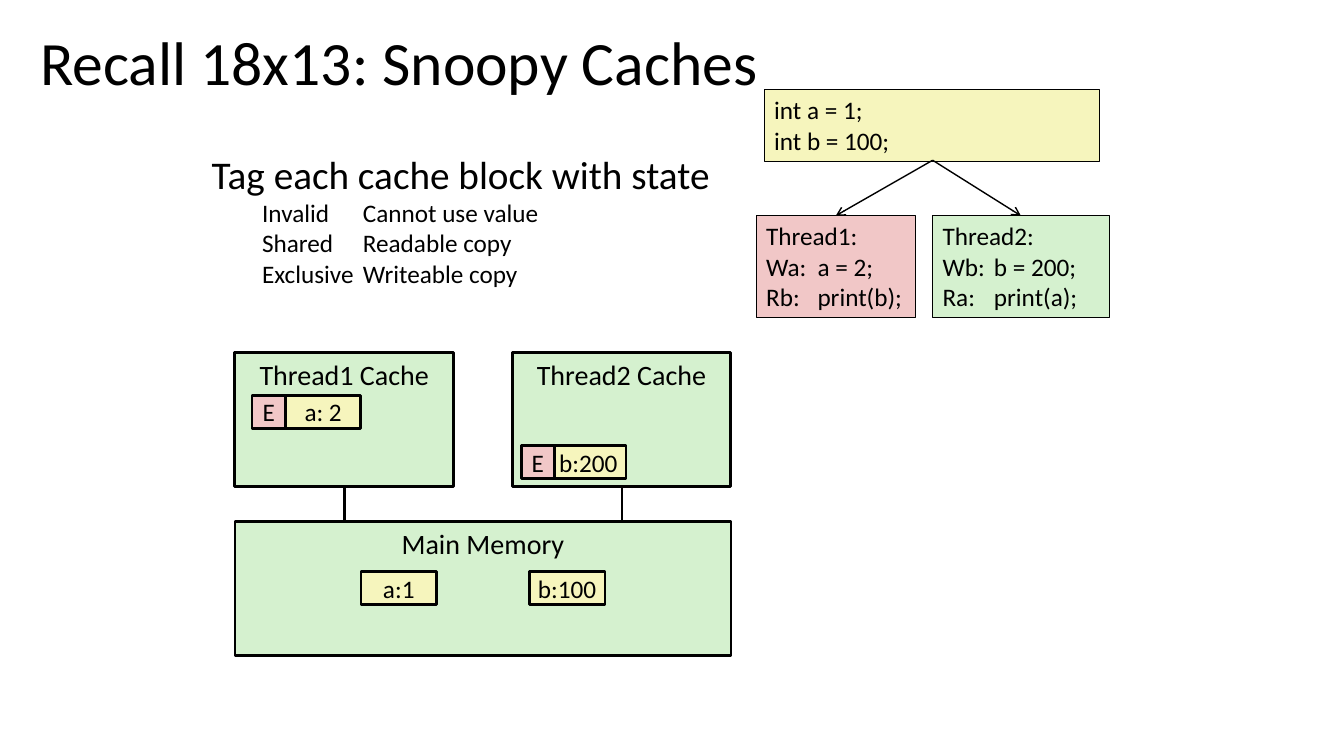
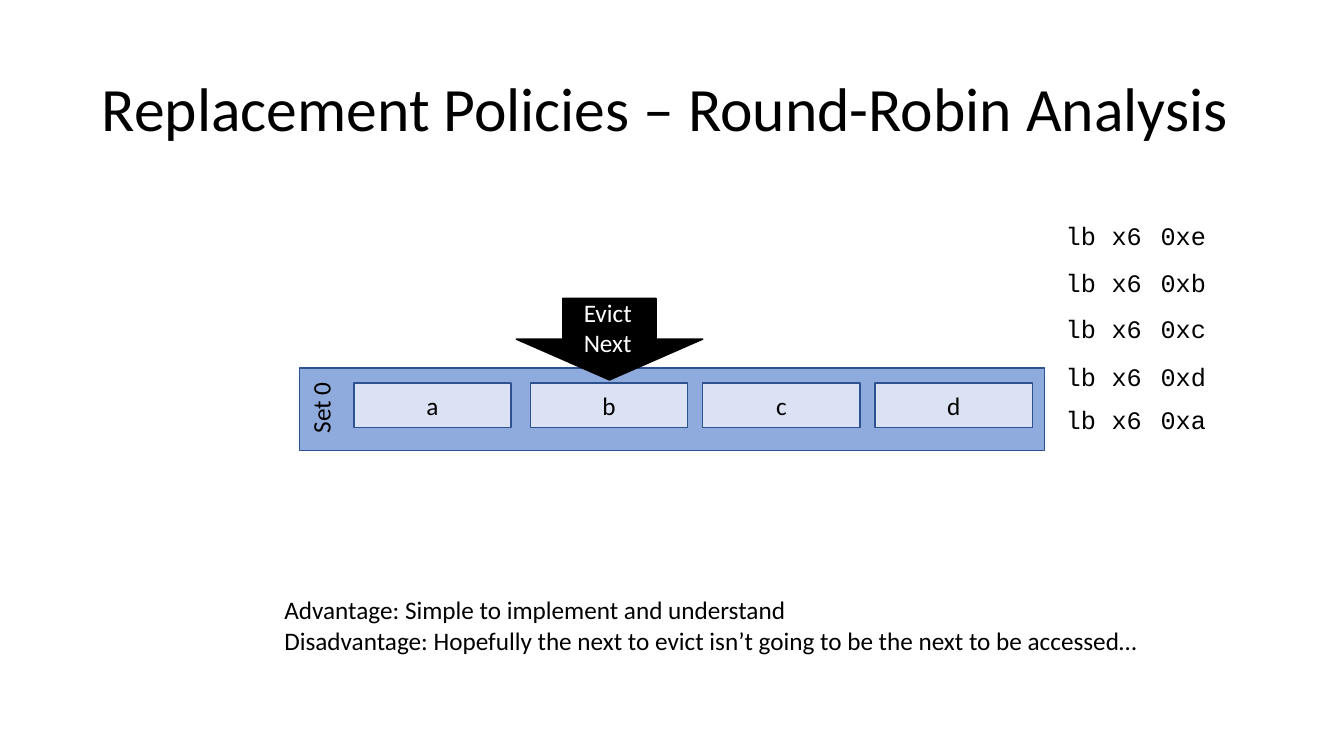
import pptx
import pptx.dml.color
import pptx.enum.shapes
import pptx.enum.text
import pptx.oxml
import pptx.oxml.ns
import pptx.util
from lxml import etree

Inches = pptx.util.Inches
Pt = pptx.util.Pt
SHAPE = pptx.enum.shapes.MSO_SHAPE
ALIGN = pptx.enum.text.PP_ALIGN
ANCHOR = pptx.enum.text.MSO_ANCHOR
qn = pptx.oxml.ns.qn

# Shared colours
BLACK, WHITE = "000000", "FFFFFF"
GREEN, YELLOW, PINK = "D5F1CF", "F6F5BD", "F1C7C7"
BLUE, PALE_BLUE, NAVY = "8FAADC", "DAE2F3", "2E528F"


def rgb(value):
    return pptx.dml.color.RGBColor.from_string(value)


class Deck:
    """Holds the style and the current slide."""
    font, code_font = "Calibri", "Courier New"
    title_size, text_size = 44, 18

    def __init__(self):
        self.prs = pptx.Presentation()
        self.prs.slide_width, self.prs.slide_height = Inches(13.33), Inches(7.5)
        self.s = None

    def slide(self):
        self.s = self.prs.slides.add_slide(self.prs.slide_layouts[6])

    def style(self, tf, text, size=text_size, color=BLACK, font=font,
              align=ALIGN.LEFT, tab=None):
        tf.text = text
        for p in tf.paragraphs:
            p.alignment = align
            if tab:
                tabs = etree.SubElement(p._p.get_or_add_pPr(), qn("a:tabLst"))
                etree.SubElement(tabs, qn("a:tab"), pos=str(Inches(tab)), algn="l")
            for r in p.runs:
                r.font.size, r.font.name = Pt(size), font
                r.font.color.rgb = rgb(color)

    def text(self, x, y, w, h, text, vert=None, **style):
        tf = self.s.shapes.add_textbox(*map(Inches, (x, y, w, h))).text_frame
        tf.word_wrap = True
        tf.margin_left = tf.margin_right = tf.margin_top = tf.margin_bottom = 0
        if vert:
            tf._txBody.bodyPr.set("vert", vert)
        self.style(tf, text, **style)

    def title(self, x, y, text):
        self.text(x, y, 12.93 - x, 0.74, text, size=self.title_size)

    def box(self, x, y, w, h, fill, text="", line=BLACK, weight=2.0,
            anchor=ANCHOR.TOP, wrap=True, kind=SHAPE.RECTANGLE, **style):
        sp = self.s.shapes.add_shape(kind, *map(Inches, (x, y, w, h)))
        sp.shadow.inherit = False
        sp.fill.solid()
        sp.fill.fore_color.rgb = rgb(fill)
        sp.line.color.rgb, sp.line.width = rgb(line), Pt(weight)
        if text:
            tf = sp.text_frame
            tf.word_wrap, tf.vertical_anchor = wrap, anchor
            self.style(tf, text, **style)

    def label(self, x, y, w, h, fill, text, **style):
        """A small box with its text in the middle."""
        self.box(x, y, w, h, fill, text, anchor=ANCHOR.MIDDLE, wrap=False,
                 align=ALIGN.CENTER, **style)

    def line(self, x1, y1, x2, y2, weight, arrow=False):
        c = self.s.shapes.add_connector(pptx.enum.shapes.MSO_CONNECTOR.STRAIGHT,
                                        *map(Inches, (x1, y1, x2, y2)))
        c.line.color.rgb, c.line.width = rgb(BLACK), Pt(weight)
        if arrow:
            etree.SubElement(c.line._get_or_add_ln(), qn("a:tailEnd"), type="arrow")
        etree.SubElement(c._element.spPr, qn("a:effectLst"))

    def code_table(self, x, y, widths, heights, tops, rows):
        aligns = (ALIGN.LEFT, ALIGN.CENTER, ALIGN.RIGHT)
        table = self.s.shapes.add_table(
            len(rows), len(widths), Inches(x), Inches(y),
            Inches(sum(widths)), Inches(sum(heights))).table
        table.first_row = table.horz_banding = False
        for column, width in zip(table.columns, widths):
            column.width = Inches(width)
        for i, row in enumerate(rows):
            table.rows[i].height = Inches(heights[i])
            for j, text in enumerate(row.split()):
                cell = table.cell(i, j)
                cell.fill.background()
                cell.margin_left = Inches(0.03 if j == 0 else 0)
                cell.margin_right = cell.margin_bottom = 0
                cell.margin_top = Inches(tops[i])
                self.style(cell.text_frame, text, font=self.code_font,
                           align=aligns[j])
                # Plain cells, no borders
                for k, side in enumerate(("a:lnL", "a:lnR", "a:lnT", "a:lnB")):
                    ln = pptx.oxml.parse_xml(
                        f'<{side} {pptx.oxml.ns.nsdecls("a")}><a:noFill/></{side}>')
                    cell._tc.get_or_add_tcPr().insert(k, ln)


def snoopy_caches(d):
    d.slide()
    d.title(0.4, 0.24, "Recall 18x13: Snoopy Caches")

    # Block states
    d.text(2.1, 1.49, 8.64, 0.47, "Tag each cache block with state", size=28)
    d.text(2.6, 1.96, 8.14, 0.92, "Invalid\tCannot use value\n"
           "Shared\tReadable copy\nExclusive\tWriteable copy", tab=1)

    # Main memory
    d.box(2.33, 5.17, 4.92, 1.33, GREEN, "Main Memory", size=20, align=ALIGN.CENTER)
    for x, text in ((3.58, "a:1"), (5.25, "b:100")):
        d.label(x, 5.67, 0.75, 0.33, YELLOW, text)

    # Caches, each with one exclusive block
    caches = ((2.33, "Thread1 Cache", 2.5, 2.83, 3.92, "a: 2"),
              (5.08, "Thread2 Cache", 5.17, 5.46, 4.42, "b:200"))
    for x, name, tag_x, value_x, y, value in caches:
        d.box(x, 3.5, 2.17, 1.33, GREEN, name, size=20, align=ALIGN.CENTER)
        d.line(x + 1.09, 5.17, x + 1.09, 4.83, 2)
        d.label(value_x, y, 0.75, 0.33, YELLOW, value)
        d.label(tag_x, y, 0.33, 0.33, PINK, "E")

    # Program and its threads
    d.box(7.58, 0.89, 3.33, 0.71, YELLOW, "int a = 1;\nint b = 100;", weight=0.75)
    threads = ((7.5, 1.58, PINK, "Thread1:\nWa:\ta = 2;\nRb:\tprint(b);"),
               (9.25, 1.75, GREEN, "Thread2:\nWb:\tb = 200;\nRa:\tprint(a);"))
    for x, w, fill, code in threads:
        d.box(x, 2.14, w, 1.01, fill, code, weight=0.75, tab=0.51)
        d.line(9.25, 1.59, x + w / 2, 2.14, 1, arrow=True)


def round_robin(d):
    d.slide()
    d.title(1.01, 0.69, "Replacement Policies – Round-Robin Analysis")

    # Load instructions
    d.code_table(10.54, 2.23, (0.41, 0.45, 0.56), (0.41, 0.46, 0.47, 0.45, 0.39),
                 (0, 0.05, 0.05, 0.06, 0.03),
                 [f"lb x6 0x{block}" for block in "ebcda"])

    # Cache set and its blocks
    d.box(2.97, 3.65, 7.39, 0.82, BLUE, line=NAVY, weight=1)
    d.text(3.03, 3.77, 0.28, 0.53, "Set 0", vert="vert270")
    for x, block in zip((3.51, 5.26, 6.97, 8.68), "abcd"):
        d.label(x, 3.8, 1.56, 0.44, PALE_BLUE, block, line=NAVY, weight=1)

    # Eviction pointer
    d.box(5.12, 2.96, 1.85, 0.81, BLACK, weight=1, kind=SHAPE.DOWN_ARROW)
    d.text(5.79, 2.95, 0.5, 0.62, "Evict Next", color=WHITE)

    # Assessment
    d.text(2.82, 5.9, 8.6, 0.62, "Advantage: Simple to implement and understand\n"
           "Disadvantage: Hopefully the next to evict isn’t going to be "
           "the next to be accessed…")


def main():
    d = Deck()
    snoopy_caches(d)
    round_robin(d)
    d.prs.save("out.pptx")


if __name__ == "__main__":
    main()
